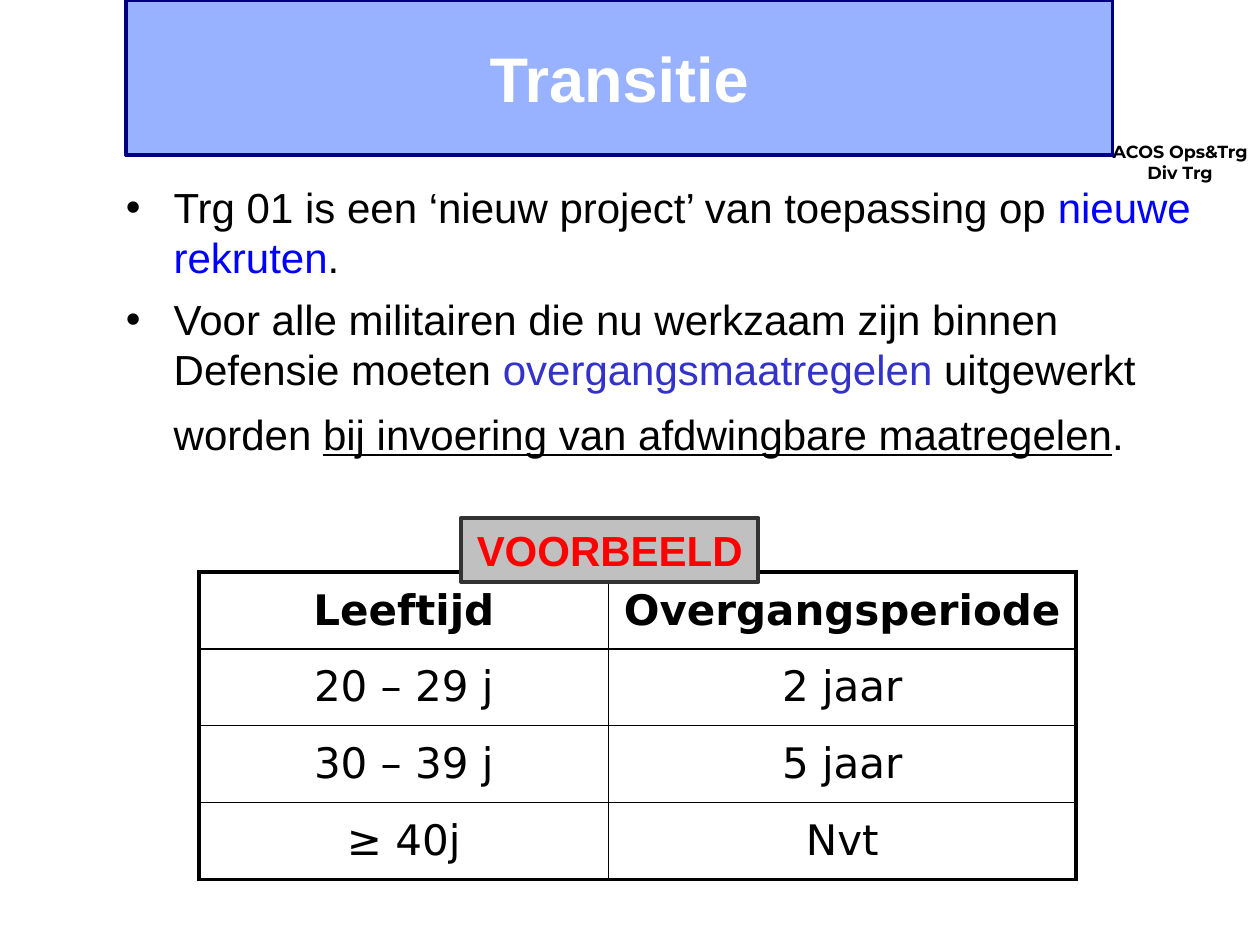
from dataclasses import dataclass

from lxml import etree
from pptx import Presentation
from pptx import util as u
from pptx.dml.color import RGBColor
from pptx.enum import shapes, text
from pptx.oxml import ns

Inches, Pt = u.Inches, u.Pt


@dataclass(frozen=True)
class Theme:
    ink: str = "000000"
    white: str = "FFFFFF"
    banner: str = "3366FF"
    navy: str = "000080"
    blue: str = "0000FF"
    violet: str = "3333CC"
    red: str = "FF0000"
    silver: str = "C0C0C0"
    charcoal: str = "333333"
    sans: str = "Arial"
    table_font: str = "DejaVu Sans"
    tag_font: str = "Montserrat"
    title: int = 36
    large: int = 32
    body: int = 24
    small: int = 10
    thick: float = 2.25
    thin: float = 1


THEME = Theme()
BULLETS = [
    [("Trg 01 is een ‘nieuw project’ van toepassing op ", {}),
     ("nieuwe rekruten", {"color": THEME.blue}),
     (".", {})],
    [("Voor alle militairen die nu werkzaam zijn binnen Defensie moeten ", {}),
     ("overgangsmaatregelen", {"color": THEME.violet}),
     (" uitgewerkt worden ", {}),
     ("bij invoering van afdwingbare maatregelen", {"underline": True}),
     (".", {}),
     (" ", {"size": THEME.large})],
]
PERIODS = [
    ("Leeftijd", "Overgangsperiode"),
    ("20 – 29 j", "2 jaar"),
    ("30 – 39 j", "5 jaar"),
    ("≥ 40j", "Nvt"),
]


def style(span, size=THEME.body, color=THEME.ink, name=THEME.sans, bold=False, underline=False):
    font = span.font
    font.size, font.name, font.bold, font.underline = Pt(size), name, bold, underline
    font.color.rgb = RGBColor.from_string(color)


def write_centred(frame, words, **look):
    frame.text = words
    for para in frame.paragraphs:
        para.alignment = text.PP_ALIGN.CENTER
        for span in para.runs:
            style(span, **look)


def add_panel(page, box, words, fill, line, **look):
    panel = page.shapes.add_shape(shapes.MSO_SHAPE.RECTANGLE, *map(Inches, box))
    panel.shadow.inherit = False
    panel.fill.solid()
    panel.fill.fore_color.rgb = RGBColor.from_string(fill)
    panel.line.color.rgb = RGBColor.from_string(line)
    panel.line.width = Pt(THEME.thick)
    panel.text_frame.vertical_anchor = text.MSO_ANCHOR.MIDDLE
    write_centred(panel.text_frame, words, bold=True, **look)
    return panel


def add_banner(page, box):
    banner = add_panel(page, box, "Transitie", THEME.banner, THEME.navy,
                       size=THEME.title, color=THEME.white)
    # Half-transparent fill
    color = banner.fill._xPr.find(".//" + ns.qn("a:srgbClr"))
    etree.SubElement(color, ns.qn("a:alpha"), val="50000")


def add_unit_tag(page, box):
    tag = page.shapes.add_textbox(*map(Inches, box))
    tag.text_frame.word_wrap = False
    write_centred(tag.text_frame, "ACOS Ops&Trg\nDiv Trg",
                  size=THEME.small, name=THEME.tag_font, bold=True)


def add_bullets(page, box):
    frame = page.shapes.add_textbox(*map(Inches, box)).text_frame
    frame.word_wrap = True
    indent = Inches(0.38)
    for index, parts in enumerate(BULLETS):
        para = frame.add_paragraph() if index else frame.paragraphs[0]
        props = para._p.get_or_add_pPr()
        props.set("marL", str(indent))
        props.set("indent", str(-indent))
        if index:
            para.space_before = Pt(6.4)
        etree.SubElement(props, ns.qn("a:buFont"), typeface=THEME.sans)
        etree.SubElement(props, ns.qn("a:buChar"), char="•")
        for words, look in parts:
            span = para.add_run()
            span.text = words
            style(span, **look)


def set_borders(cell, outer):
    props = cell._tc.get_or_add_tcPr()
    for index, (side, is_outer) in enumerate(outer.items()):
        width = Pt(THEME.thick if is_outer else THEME.thin)
        line = etree.Element(ns.qn("a:" + side), w=str(width))
        fill = etree.SubElement(line, ns.qn("a:solidFill"))
        etree.SubElement(fill, ns.qn("a:srgbClr"), val=THEME.ink)
        props.insert(index, line)


def add_periods(page, box):
    last_row, last_col = len(PERIODS) - 1, len(PERIODS[0]) - 1
    table = page.shapes.add_table(last_row + 1, last_col + 1, *map(Inches, box)).table
    for column, width in zip(table.columns, (3.25, 3.71)):
        column.width = Inches(width)
    for r, values in enumerate(PERIODS):
        for c, words in enumerate(values):
            cell = table.cell(r, c)
            cell.fill.background()
            cell.vertical_anchor = text.MSO_ANCHOR.MIDDLE
            cell.margin_left = cell.margin_right = Inches(0.09)
            write_centred(cell.text_frame, words, name=THEME.table_font, bold=r == 0)
            set_borders(cell, {"lnL": c == 0, "lnR": c == last_col,
                               "lnT": r == 0, "lnB": r == last_row})


def main():
    deck = Presentation()
    deck.slide_width, deck.slide_height = Inches(10), Inches(7.5)
    page = deck.slides.add_slide(deck.slide_layouts[6])

    # Heading and unit name
    add_unit_tag(page, (8.69, 1.07, 1.35, 0.43))
    add_banner(page, (1, 0, 7.83, 1.23))

    # Explanation
    add_bullets(page, (0.9, 1.39, 8.68, 2.91))

    # Example table with its label on top
    add_periods(page, (1.58, 4.54, 6.96, 2.44))
    add_panel(page, (3.66, 4.11, 2.36, 0.51), "VOORBEELD", THEME.silver, THEME.charcoal,
              color=THEME.red)

    deck.save("out.pptx")


if __name__ == "__main__":
    main()
